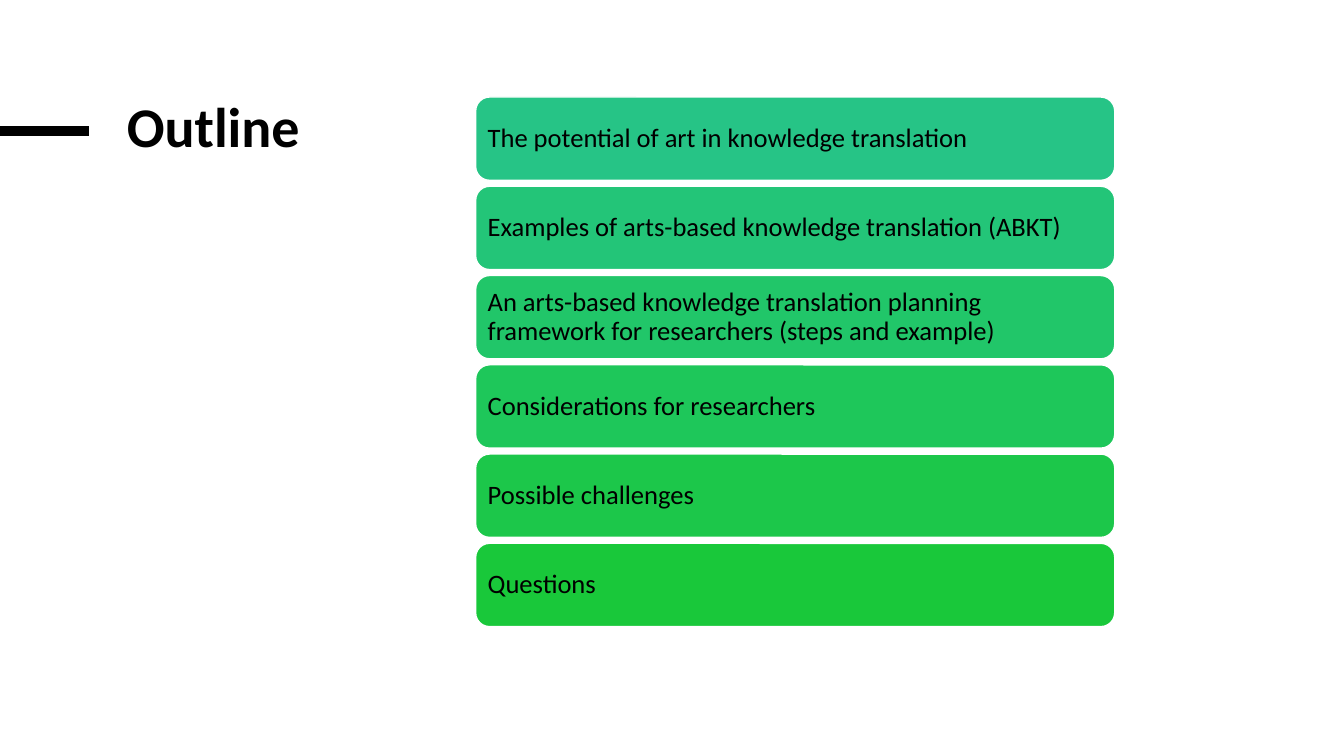
import dataclasses

import lxml.etree
import pptx
import pptx.dml.color
import pptx.enum.shapes
import pptx.enum.text
import pptx.oxml.ns
import pptx.util


@dataclasses.dataclass(frozen=True)
class Theme:
    font: str = "Calibri"
    ink: str = "000000"
    outline: str = "FFFFFF"
    bars: tuple = ("26C486", "23C578", "21C669", "1EC75A", "1CC74A", "19C83A")
    title_size: float = 40
    topic_size: float = 19


class OutlineSlide:
    def __init__(self, presentation, theme):
        self.theme = theme
        self.slide = presentation.slides.add_slide(presentation.slide_layouts[6])

    def color(self, value):
        return pptx.dml.color.RGBColor.from_string(value)

    def set_text(self, frame, text, size, spacing, bold=False):
        frame.word_wrap = True
        paragraph = frame.paragraphs[0]
        paragraph.text = text
        paragraph.alignment = pptx.enum.text.PP_ALIGN.LEFT
        paragraph.line_spacing = spacing
        paragraph.font.name = self.theme.font
        paragraph.font.size = pptx.util.Pt(size)
        paragraph.font.bold = bold
        paragraph.font.color.rgb = self.color(self.theme.ink)

    def rule(self, left, right, y, weight):
        accent = self.slide.shapes.add_connector(
            pptx.enum.shapes.MSO_CONNECTOR.STRAIGHT,
            *map(pptx.util.Pt, (left, y, right, y)),
        )
        accent.line.color.rgb = self.color(self.theme.ink)
        accent.line.width = pptx.util.Pt(weight)
        properties = accent.element.spPr
        lxml.etree.SubElement(properties, pptx.oxml.ns.qn("a:effectLst"))

    def title(self, text, *box):
        heading = self.slide.shapes.add_textbox(*map(pptx.util.Pt, box))
        self.set_text(heading.text_frame, text, self.theme.title_size, 0.85, True)

    def topic(self, text, fill, *box):
        bar = self.slide.shapes.add_shape(
            pptx.enum.shapes.MSO_SHAPE.ROUNDED_RECTANGLE, *map(pptx.util.Pt, box)
        )
        bar.shadow.inherit = False
        bar.fill.solid()
        bar.fill.fore_color.rgb = self.color(fill)
        bar.line.color.rgb = self.color(self.theme.outline)
        bar.line.width = pptx.util.Pt(1)
        frame = bar.text_frame
        frame.vertical_anchor = pptx.enum.text.MSO_ANCHOR.MIDDLE
        inset = pptx.util.Pt(5.7)
        frame.margin_left = frame.margin_right = inset
        frame.margin_top = frame.margin_bottom = inset
        self.set_text(frame, text, self.theme.topic_size, 0.9)


TOPICS = (
    "The potential of art in knowledge translation",
    "Examples of arts-based knowledge translation (ABKT)",
    "An arts-based knowledge translation planning framework for researchers (steps and example)",
    "Considerations for researchers",
    "Possible challenges",
    "Questions",
)


def main():
    presentation = pptx.Presentation()
    presentation.slide_width = pptx.util.Pt(960)
    presentation.slide_height = pptx.util.Pt(540)
    theme = Theme()
    outline = OutlineSlide(presentation, theme)

    outline.rule(0, 63.4, 93.6, 6.75)
    outline.title("Outline", 83.5, 69.1, 296.6, 184.3)
    top, pitch = 69.3, 63.76
    for index, (topic, fill) in enumerate(zip(TOPICS, theme.bars)):
        outline.topic(topic, fill, 339.8, top + index * pitch, 456.5, 59.5)

    presentation.save("out.pptx")


if __name__ == "__main__":
    main()
